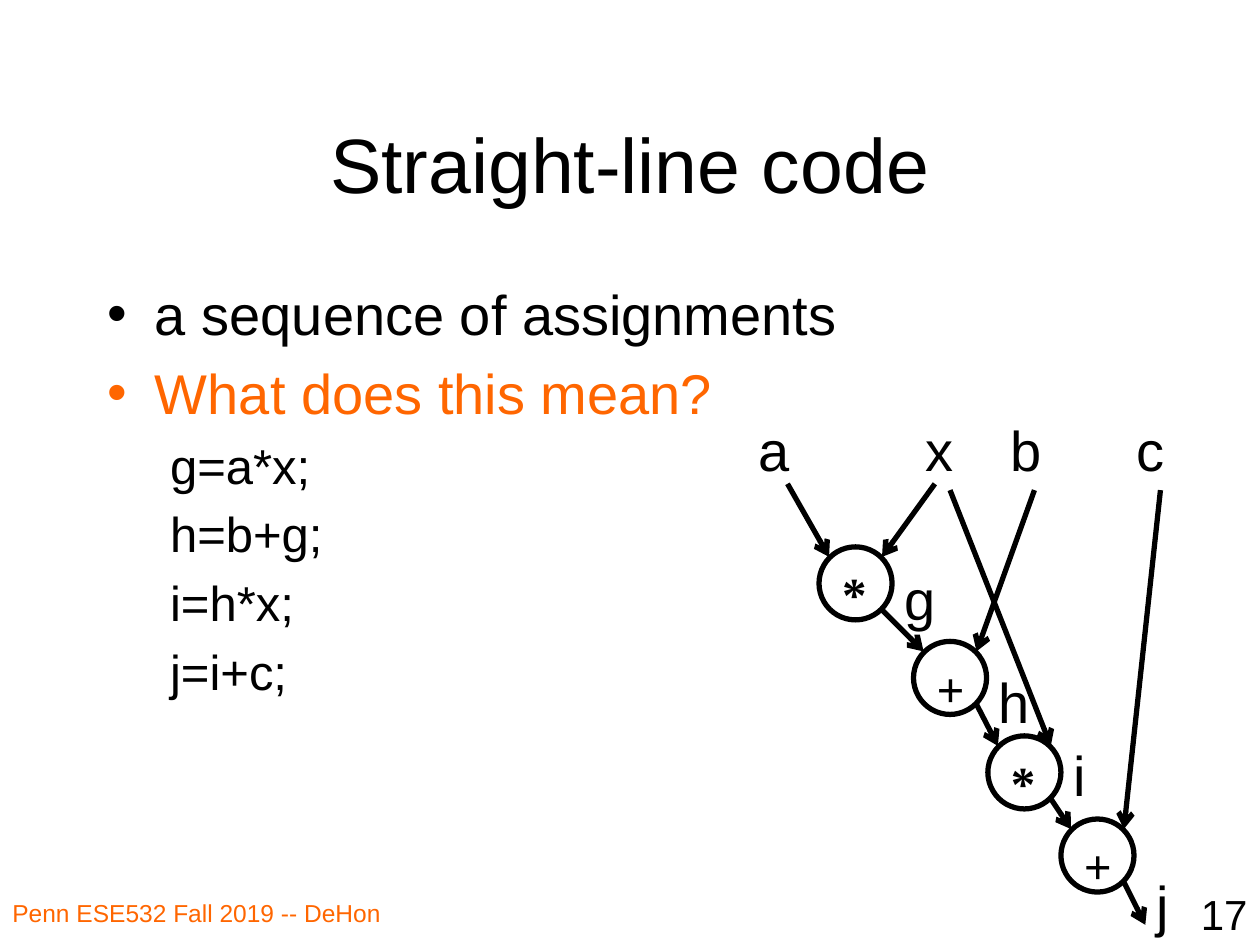
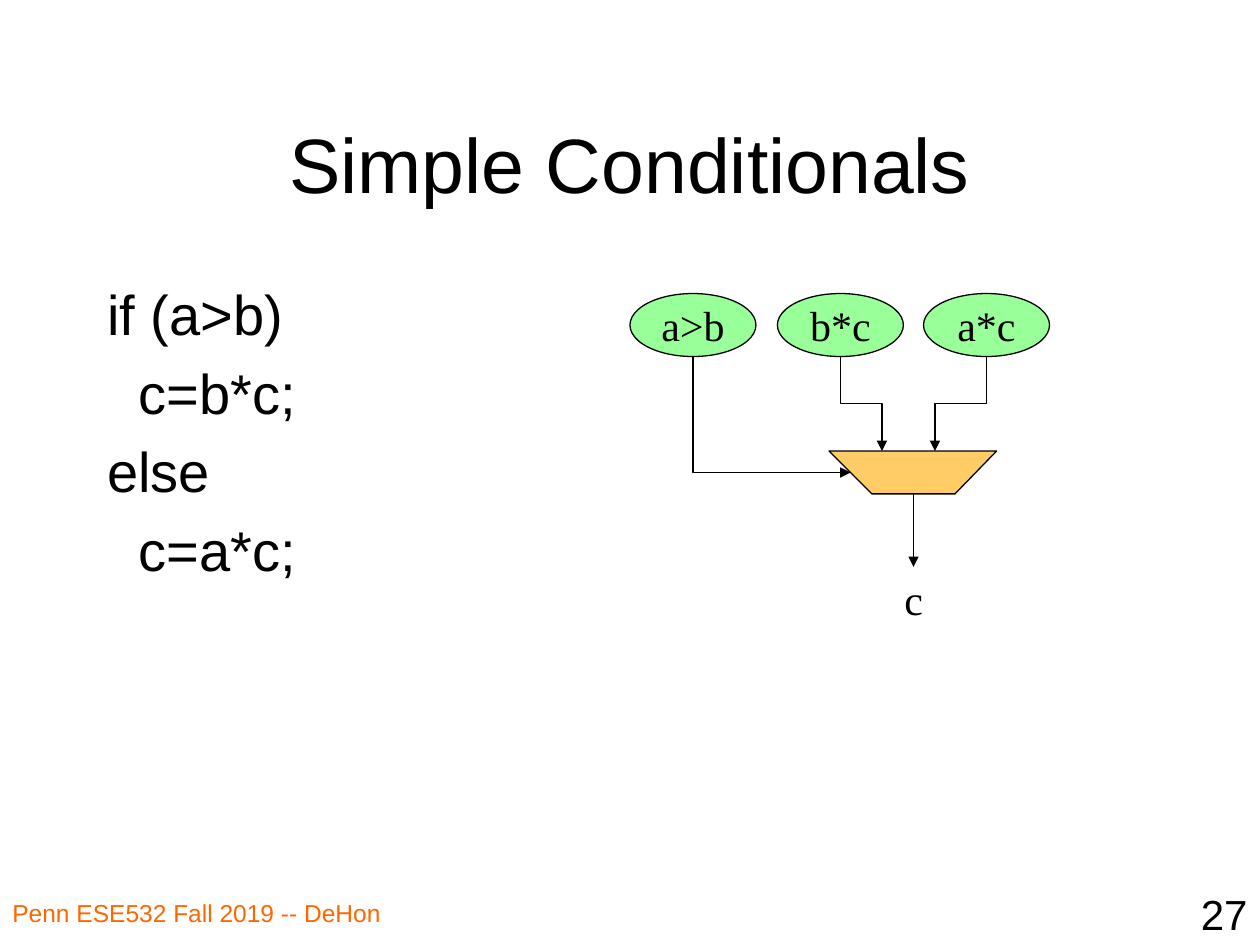
from lxml import etree
from pptx import Presentation
from pptx.dml.color import RGBColor
from pptx.enum.shapes import MSO_CONNECTOR, MSO_SHAPE
from pptx.enum.text import MSO_ANCHOR, MSO_AUTO_SIZE, PP_ALIGN
from pptx.oxml.ns import qn
from pptx.util import Inches, Pt

BLACK = RGBColor(0x00, 0x00, 0x00)
ORANGE = RGBColor(0xFF, 0x66, 0x00)
GREEN = RGBColor(0x99, 0xFF, 0x99)
AMBER = RGBColor(0xFF, 0xCC, 0x66)
SANS, SERIF = "Arial", "Times New Roman"
LEFT, CENTER, RIGHT = PP_ALIGN.LEFT, PP_ALIGN.CENTER, PP_ALIGN.RIGHT
TOP, MIDDLE = MSO_ANCHOR.TOP, MSO_ANCHOR.MIDDLE
STRAIGHT, ELBOW = MSO_CONNECTOR.STRAIGHT, MSO_CONNECTOR.ELBOW
OVAL = MSO_SHAPE.OVAL
NO_AUTOFIT = MSO_AUTO_SIZE.NONE


def write(box, text, size, font=SANS, color=BLACK, align=LEFT, anchor=TOP, wrap=True):
    """Fill a shape with one formatted paragraph."""
    frame = box.text_frame
    frame.word_wrap = wrap
    frame.auto_size = NO_AUTOFIT
    frame.vertical_anchor = anchor
    para = frame.paragraphs[0]
    para.text = text
    para.alignment = align
    para.font.name = font
    para.font.size = Pt(size)
    para.font.color.rgb = color
    return para


def draw_arrow(page, start, end, width, head, kind=STRAIGHT):
    """Draw an arrow; elbow arrows leave the start point downwards."""
    (x1, y1), (x2, y2) = start, end
    if kind == ELBOW:
        # Unrotated box around the same centre; the turn is added below
        mid_x, mid_y = (x1 + x2) / 2, (y1 + y2) / 2
        half_w, half_h = (y2 - y1) / 2, abs(x2 - x1) / 2
        side = 1 if x2 > x1 else -1
        x1, x2 = mid_x + side * half_w, mid_x - side * half_w
        y1, y2 = mid_y - half_h, mid_y + half_h
    arrow = page.shapes.add_connector(kind, Inches(x1), Inches(y1), Inches(x2), Inches(y2))
    arrow.line.color.rgb = BLACK
    arrow.line.width = Pt(width)
    properties = arrow.element.spPr
    if kind == ELBOW:
        turn = 270 if side == 1 else 90
        properties.find(qn("a:xfrm")).set("rot", str(turn * 60000))
    etree.SubElement(properties.find(qn("a:ln")), qn("a:tailEnd"), type=head)
    etree.SubElement(properties, qn("a:effectLst"))
    return arrow


deck = Presentation()
deck.slide_width, deck.slide_height = Inches(10), Inches(7.5)

# Body lines: text, size, colour, left margin, first-line indent, bullet
PAGES = [
    ("Straight-line code", "17", 6.17, [
        ("a sequence of assignments", 32, BLACK, 0.38, -0.38, True),
        ("What does this mean?", 32, ORANGE, 0.38, -0.38, True),
        ("g=a*x;", 28, BLACK, 0.81, -0.31, False),
        ("h=b+g;", 28, BLACK, 0.81, -0.31, False),
        ("i=h*x;", 28, BLACK, 0.81, -0.31, False),
        ("j=i+c;", 28, BLACK, 0.81, -0.31, False),
    ]),
    ("Simple Conditionals", "27", 8.5, [
        ("if (a>b)", 32, BLACK, 0.38, -0.38, False),
        ("c=b*c;", 32, BLACK, 0.38, -0.13, False),
        ("else", 32, BLACK, 0.38, -0.38, False),
        ("c=a*c;", 32, BLACK, 0.38, -0.13, False),
    ]),
]

# Shared parts: footer, page number, title and body
for title, number, body_width, lines in PAGES:
    page = deck.slides.add_slide(deck.slide_layouts[1])
    footer = page.shapes.add_textbox(Inches(0), Inches(7.08), Inches(3.83), Inches(0.42))
    write(footer, "Penn ESE532 Fall 2019 -- DeHon", 14, color=ORANGE)
    number_box = page.shapes.add_textbox(Inches(7.92), Inches(7), Inches(2.08), Inches(0.5))
    write(number_box, number, 24, align=RIGHT)

    heading, body = page.placeholders
    heading.left, heading.top = Inches(0.75), Inches(0.67)
    heading.width, heading.height = Inches(8.5), Inches(1.25)
    write(heading, title, 44, align=CENTER, anchor=MIDDLE)

    body.left, body.top = Inches(0.75), Inches(2.17)
    body.width, body.height = Inches(body_width), Inches(4.5)
    frame = body.text_frame
    frame.auto_size = NO_AUTOFIT
    for index, (text, size, color, margin, indent, bullet) in enumerate(lines):
        para = frame.add_paragraph() if index else frame.paragraphs[0]
        para.text = text
        para.level = 1 if size == 28 else 0
        para.font.name = SANS
        para.font.size = Pt(size)
        para.font.color.rgb = color
        settings = para._p.get_or_add_pPr()
        settings.set("marL", str(Inches(margin)))
        settings.set("indent", str(Inches(indent)))
        mark = etree.Element(qn("a:buChar"), char="•") if bullet else etree.Element(qn("a:buNone"))
        # Bullet settings come before the run defaults
        settings.insert_element_before(mark, "a:tabLst", "a:defRPr", "a:extLst")

code_page, conditional_page = deck.slides

# Dataflow graph: operators, each feeding the next
NODE = 0.58
NEAR, FAR = 0.08, 0.5  # where arrows meet a circle
operators = [(6.5, 4.34, "*"), (7.25, 5.09, "+"), (7.84, 5.84, "*"), (8.42, 6.5, "+")]
targets = [(x + NEAR, y + NEAR) for x, y, _ in operators[1:]] + [(9.09, 7.34)]
for (x, y, symbol), target in zip(operators, targets):
    node = code_page.shapes.add_shape(OVAL, Inches(x), Inches(y), Inches(NODE), Inches(NODE))
    node.shadow.inherit = False
    node.fill.background()
    node.line.color.rgb = BLACK
    node.line.width = Pt(3)
    write(node, symbol, 28, SERIF).font.bold = True
    draw_arrow(code_page, (x + FAR, y + FAR), target, 3, "arrow")

# Dataflow graph: variable names
variables = [("a", 5.92, 3.25), ("x", 7.25, 3.25), ("b", 7.92, 3.25), ("c", 8.92, 3.25),
             ("g", 7.08, 4.43), ("h", 7.83, 5.25), ("i", 8.42, 5.83), ("j", 9.08, 6.86)]
for name, x, y in variables:
    label = code_page.shapes.add_textbox(Inches(x), Inches(y), Inches(NODE), Inches(0.64))
    write(label, name, 32)

# Dataflow graph: arrows from the inputs (start, operator index, side)
inputs = [((6.25, 3.84), 0, NEAR), ((7.42, 3.84), 0, FAR), ((8.21, 3.89), 1, FAR),
          ((7.54, 3.89), 2, FAR), ((9.21, 3.89), 3, FAR)]
for start, index, side in inputs:
    x, y, _ = operators[index]
    draw_arrow(code_page, start, (x + side, y + NEAR), 3, "arrow")

# Multiplexer: operand ellipses and their elbow arrows
operands = [("a>b", 5, (6.75, 3.75)), ("b*c", 6.17, (7, 3.58)), ("a*c", 7.33, (7.42, 3.58))]
for text, x, target in operands:
    operand = conditional_page.shapes.add_shape(OVAL, Inches(x), Inches(2.33), Inches(1), Inches(0.5))
    operand.shadow.inherit = False
    operand.fill.solid()
    operand.fill.fore_color.rgb = GREEN
    operand.line.color.rgb = BLACK
    operand.line.width = Pt(0.75)
    write(operand, text, 24, SERIF, align=CENTER, anchor=MIDDLE, wrap=False)
    arrow = draw_arrow(conditional_page, (x + 0.5, 2.83), target, 0.75, "triangle", ELBOW)
    if text == "a>b":  # the selector enters from the side with a single bend
        arrow.element.spPr.find(qn("a:prstGeom")).set("prst", "bentConnector2")

# Multiplexer: body and output
builder = conditional_page.shapes.build_freeform(Inches(6.58), Inches(3.58))
builder.add_line_segments([(Inches(x), Inches(y)) for x, y in
                           [(6.92, 3.92), (7.58, 3.92), (7.91, 3.58)]], close=True)
multiplexer = builder.convert_to_shape()
multiplexer.shadow.inherit = False
multiplexer.fill.solid()
multiplexer.fill.fore_color.rgb = AMBER
multiplexer.line.color.rgb = BLACK
multiplexer.line.width = Pt(0.75)
draw_arrow(conditional_page, (7.25, 3.92), (7.25, 4.5), 0.75, "triangle")
result = conditional_page.shapes.add_textbox(Inches(7.08), Inches(4.5), Inches(0.35), Inches(0.5))
write(result, "c", 24, SERIF, wrap=False)

deck.save("out.pptx")
